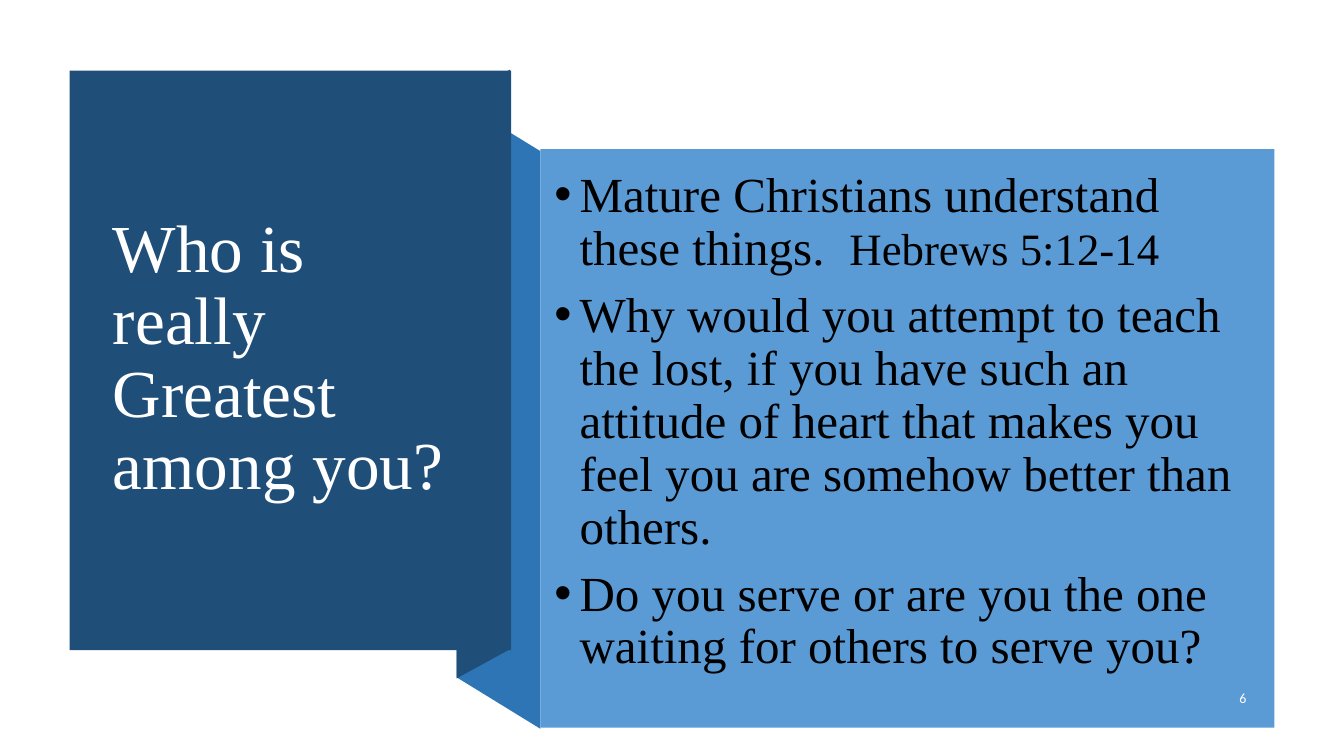
"""Build the slide with a folded title banner and a bulleted panel."""
from lxml import etree
from pptx import Presentation
from pptx.dml.color import RGBColor
from pptx.enum.shapes import MSO_SHAPE
from pptx.enum.text import MSO_ANCHOR, MSO_AUTO_SIZE, PP_ALIGN
from pptx.oxml.ns import qn
from pptx.util import Inches, Pt

NAVY = RGBColor(0x1F, 0x4E, 0x79)
MID_BLUE = RGBColor(0x2E, 0x75, 0xB6)
PANEL_BLUE = RGBColor(0x5B, 0x9B, 0xD5)
WHITE = RGBColor(0xFF, 0xFF, 0xFF)
BLACK = RGBColor(0, 0, 0)
RECTANGLE = MSO_SHAPE.RECTANGLE
MIDDLE = MSO_ANCHOR.MIDDLE
NO_AUTOFIT = MSO_AUTO_SIZE.NONE
LEFT, RIGHT = PP_ALIGN.LEFT, PP_ALIGN.RIGHT
SERIF, SANS = "Times New Roman", "Calibri"

FOLDS = [
    ([(5.36, 7.23), (4.53, 6.72), (4.53, 0.99), (5.36, 1.5)], MID_BLUE),
    ([(5.06, 6.44), (4.53, 6.73), (4.53, 0.98), (5.06, 0.69)], NAVY),
]
POINTS = [
    [("Mature Christians understand these things.  ", 35), ("Hebrews 5:12-14", 32)],
    [("Why would you attempt to teach the lost, if you have such an attitude "
      "of heart that makes you feel you are somehow better than others.", 35)],
    [("Do you serve or are you the one waiting for others to serve you?", 35)],
]


def apply_format(target, values):
    """Set each named attribute on the target."""
    for name, value in values.items():
        setattr(target, name, value)


def paint(shape, color):
    """Give a shape a flat fill without line or shadow."""
    shape.shadow.inherit = False
    shape.fill.solid()
    shape.fill.fore_color.rgb = color
    shape.line.fill.background()


def add_fold(slide, corners, color):
    """Draw a folded strip through its corners."""
    points = [(Inches(x), Inches(y)) for x, y in corners]
    builder = slide.shapes.build_freeform(*points[0], scale=1.0)
    builder.add_line_segments(points[1:], close=True)
    paint(builder.convert_to_shape(), color)


def add_block(slide, left, top, width, height, color):
    """Draw a flat rectangle."""
    box = [Inches(length) for length in (left, top, width, height)]
    paint(slide.shapes.add_shape(RECTANGLE, *box), color)


def add_text_area(slide, left, top, width, height):
    """Add a wrapping, vertically centred text box and return its frame."""
    box = [Inches(length) for length in (left, top, width, height)]
    frame = slide.shapes.add_textbox(*box).text_frame
    apply_format(frame, {"word_wrap": True, "vertical_anchor": MIDDLE, "auto_size": NO_AUTOFIT})
    return frame


def add_words(paragraph, words, size, font, color):
    """Append a formatted run to a paragraph."""
    run = paragraph.add_run()
    run.text = words
    apply_format(run.font, {"size": Pt(size), "name": font})
    run.font.color.rgb = color


def set_bullet(paragraph):
    """Give a paragraph a hanging round bullet."""
    properties = paragraph._p.get_or_add_pPr()
    properties.set("marL", str(Inches(0.25)))
    properties.set("indent", str(Inches(-0.25)))
    etree.SubElement(properties, qn("a:buFont"), typeface="Arial")
    etree.SubElement(properties, qn("a:buChar"), char="•")


def place_title(slide, words):
    """Move the title onto the banner, in front of it."""
    title = slide.shapes.title
    apply_format(title, {"left": Inches(1.02), "top": Inches(1.07),
                         "width": Inches(3.71), "height": Inches(4.99)})
    frame = title.text_frame
    apply_format(frame, {"word_wrap": True, "vertical_anchor": MIDDLE, "auto_size": NO_AUTOFIT})
    heading = frame.paragraphs[0]
    apply_format(heading, {"alignment": LEFT, "line_spacing": 0.9})
    add_words(heading, words, 48, SERIF, WHITE)
    slide.shapes._spTree.append(title._element)


def add_points(slide):
    """Write the bulleted points on the panel."""
    frame = add_text_area(slide, 5.4, 1.58, 7.06, 5.52)
    frame.margin_bottom = Inches(0.35)
    for index, pieces in enumerate(POINTS):
        point = frame.add_paragraph() if index else frame.paragraphs[0]
        apply_format(point, {"line_spacing": 0.9, "space_before": Pt(10)})
        set_bullet(point)
        for words, size in pieces:
            add_words(point, words, size, SERIF, BLACK)


def add_page_number(slide, number):
    """Write the page number at the panel's lower right."""
    page = add_text_area(slide, 11.71, 6.75, 0.75, 0.35).paragraphs[0]
    apply_format(page, {"alignment": RIGHT, "space_after": Pt(6)})
    add_words(page, number, 10, SANS, WHITE)


def main():
    """Assemble and save the slide."""
    deck = Presentation()
    apply_format(deck, {"slide_width": Inches(13.33), "slide_height": Inches(7.5)})
    slide = deck.slides.add_slide(deck.slide_layouts.get_by_name("Title Only"))
    for corners, color in FOLDS:
        add_fold(slide, corners, color)
    add_block(slide, 0.69, 0.7, 4.38, 5.75, NAVY)
    place_title(slide, "Who is really Greatest among you?")
    add_block(slide, 5.36, 1.48, 7.28, 5.74, PANEL_BLUE)
    add_points(slide)
    add_page_number(slide, "6")
    deck.save("out.pptx")


if __name__ == "__main__":
    main()
